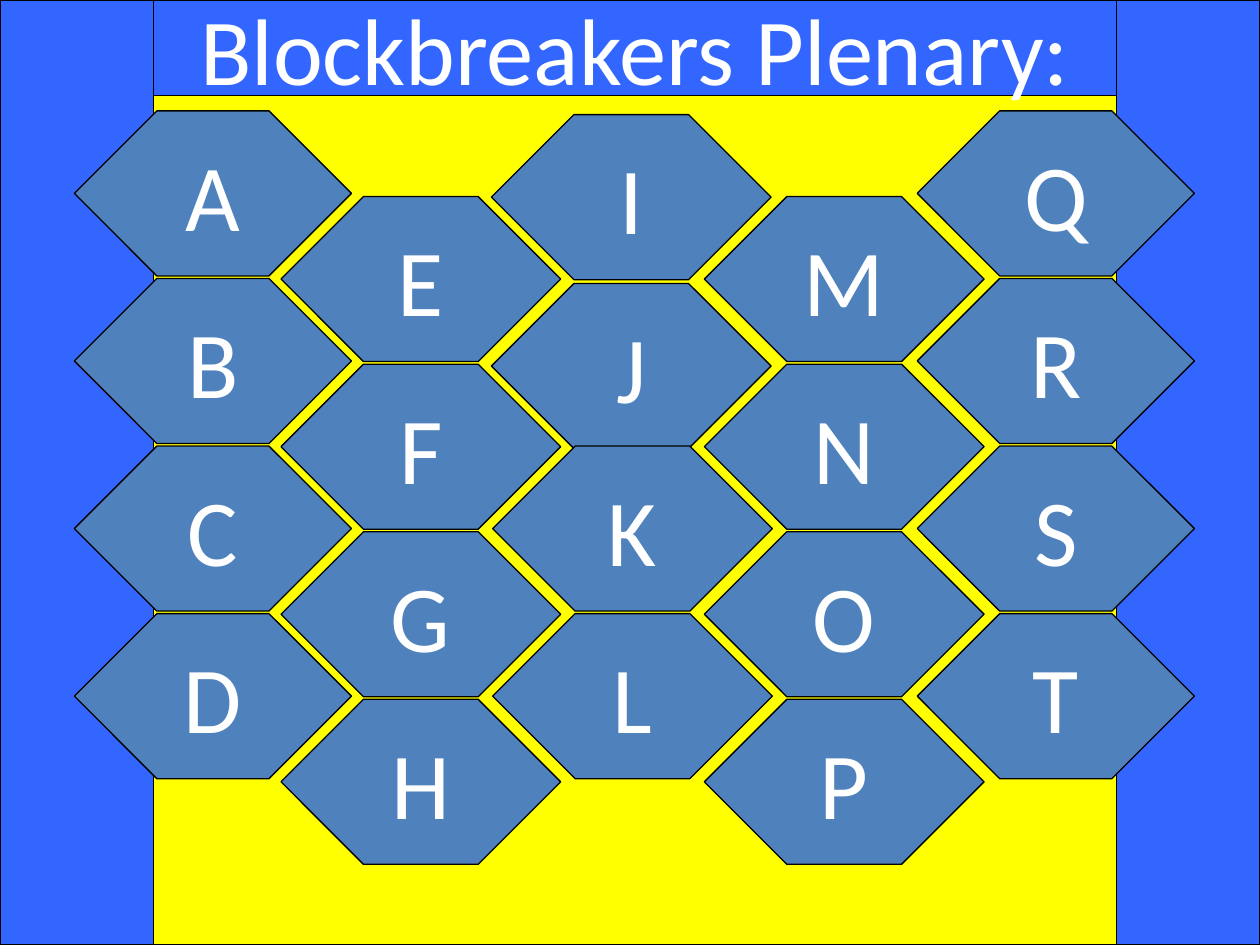
from lxml.etree import SubElement
from pptx import Presentation
from pptx.dml.color import RGBColor
from pptx.enum.shapes import MSO_SHAPE
from pptx.enum.text import MSO_ANCHOR, MSO_AUTO_SIZE, PP_ALIGN
from pptx.oxml.ns import qn
from pptx.util import Inches, Pt

COLORS = {
    "board": "FFFF00",
    "border": "3366FF",
    "tile": "4F81BD",
    "line": "000000",
    "text": "FFFFFF",
}
TILE_HEIGHT = 1.31
ROW_STEP = 1.33
FRAME = {"left": Inches(1.22), "top": Inches(0),
         "width": Inches(7.64), "height": Inches(0.76)}

# letters, left, width, top of the first tile
COLUMNS = [
    ("ABCD", 0.59, 2.2, 0.88),
    ("EFGH", 2.23, 2.22, 1.56),
    ("IJKL", 3.9, 2.22, 0.88),
    ("MNOP", 5.59, 2.22, 1.56),
    ("QRST", 7.28, 2.2, 0.88),
]
# The upper middle tiles sit a little off the grid
OFFSETS = {"I": (0, 0.03), "J": (0, 0.04), "K": (0.01, 0), "L": (0.01, 0)}


def rgb(name):
    return RGBColor.from_string(COLORS[name])


def paint(shape, fill):
    shape.fill.solid()
    shape.fill.fore_color.rgb = rgb(fill)
    shape.line.color.rgb = rgb("line")
    shape.line.width = Pt(0.75)


def write(shape, text):
    tf = shape.text_frame
    frame_format = {"text": text, "word_wrap": False,
                    "auto_size": MSO_AUTO_SIZE.NONE,
                    "vertical_anchor": MSO_ANCHOR.MIDDLE}
    for name, value in frame_format.items():
        setattr(tf, name, value)
    p = tf.paragraphs[0]
    p.alignment = PP_ALIGN.CENTER
    font = p.runs[0].font
    font.name = "Calibri"
    font.size = Pt(54)
    font.color.rgb = rgb("text")


def add_block(s, kind, left, top, width, height, fill):
    shape = s.shapes.add_shape(kind, Inches(left), Inches(top),
                               Inches(width), Inches(height))
    shape.shadow.inherit = False
    paint(shape, fill)
    return shape


def add_tile(s, letter, left, top, width):
    tile = add_block(s, MSO_SHAPE.OCTAGON, left, top, width, TILE_HEIGHT, "tile")
    tile.adjustments[0] = 0.5
    write(tile, letter)


def format_title(s, text):
    """Give the title placeholder a pointed outline and bring it to the front."""
    title = s.shapes.title
    for name, value in FRAME.items():
        setattr(title, name, value)
    geometry = SubElement(title._element.spPr, qn("a:prstGeom"), prst="octagon")
    guides = SubElement(geometry, qn("a:avLst"))
    SubElement(guides, qn("a:gd"), name="adj", fmla="val 50000")
    paint(title, "border")
    write(title, text)
    s.shapes._spTree.append(title._element)


def main():
    prs = Presentation()
    prs.slide_width, prs.slide_height = Inches(10), Inches(7.5)
    s = prs.slides.add_slide(prs.slide_layouts[5])
    for left, width, fill in [(0, 10, "board"), (0, 1.22, "border"),
                              (8.86, 1.14, "border")]:
        add_block(s, MSO_SHAPE.RECTANGLE, left, 0, width, 7.5, fill)
    for letters, left, width, top in COLUMNS:
        for row, letter in enumerate(letters):
            dx, dy = OFFSETS.get(letter, (0, 0))
            add_tile(s, letter, left + dx, top + row * ROW_STEP + dy, width)
    format_title(s, "Blockbreakers Plenary:")
    prs.save("out.pptx")


if __name__ == "__main__":
    main()
